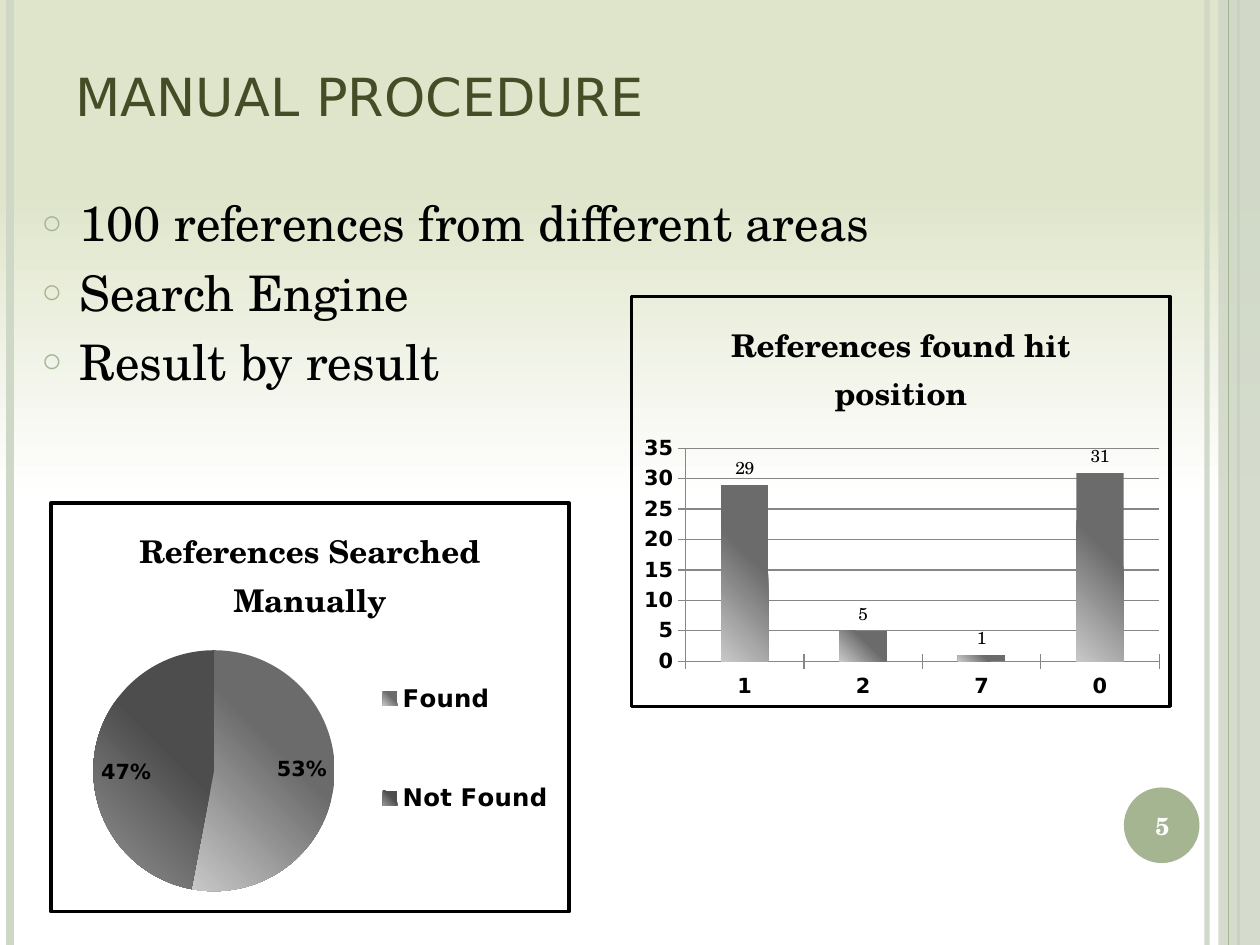
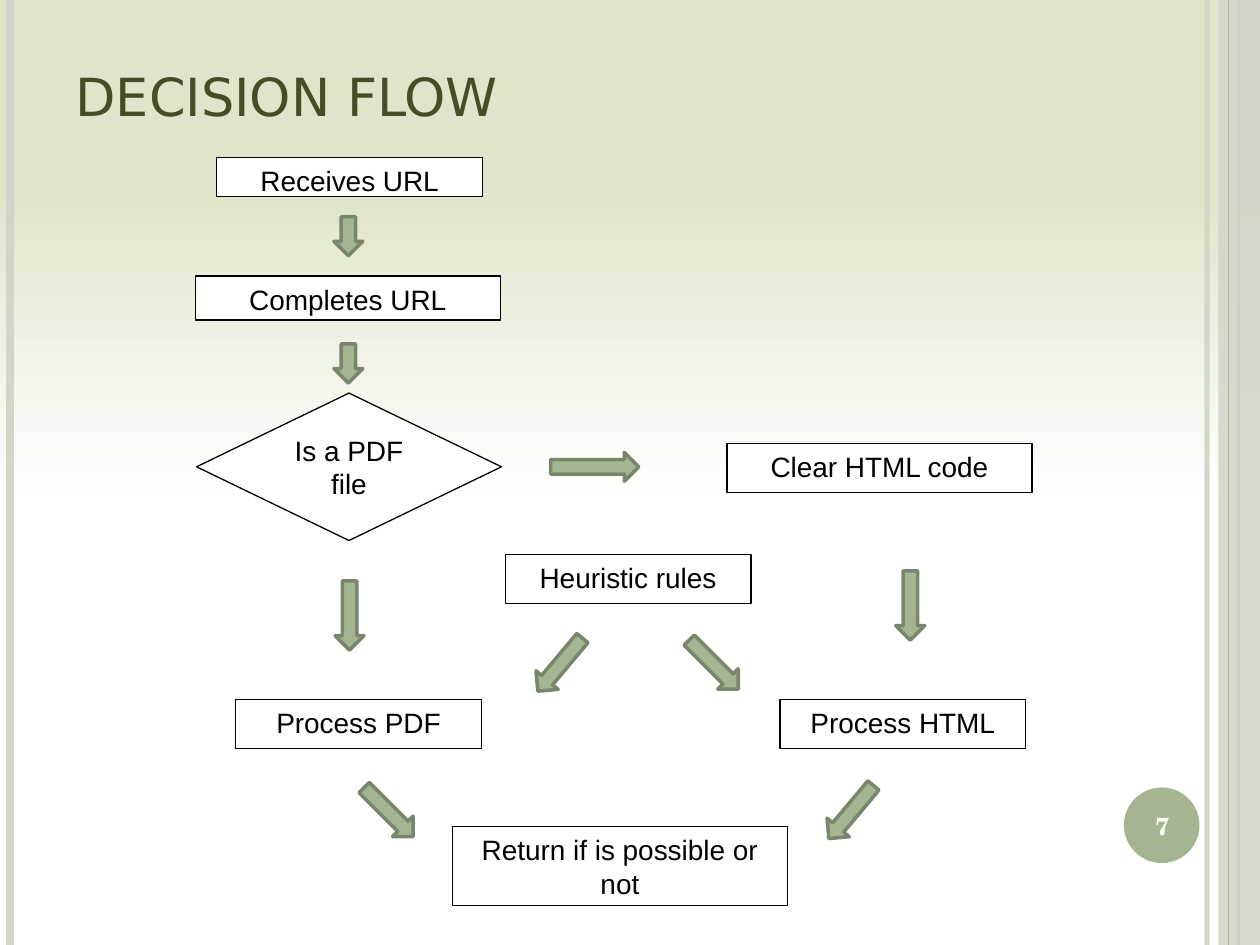
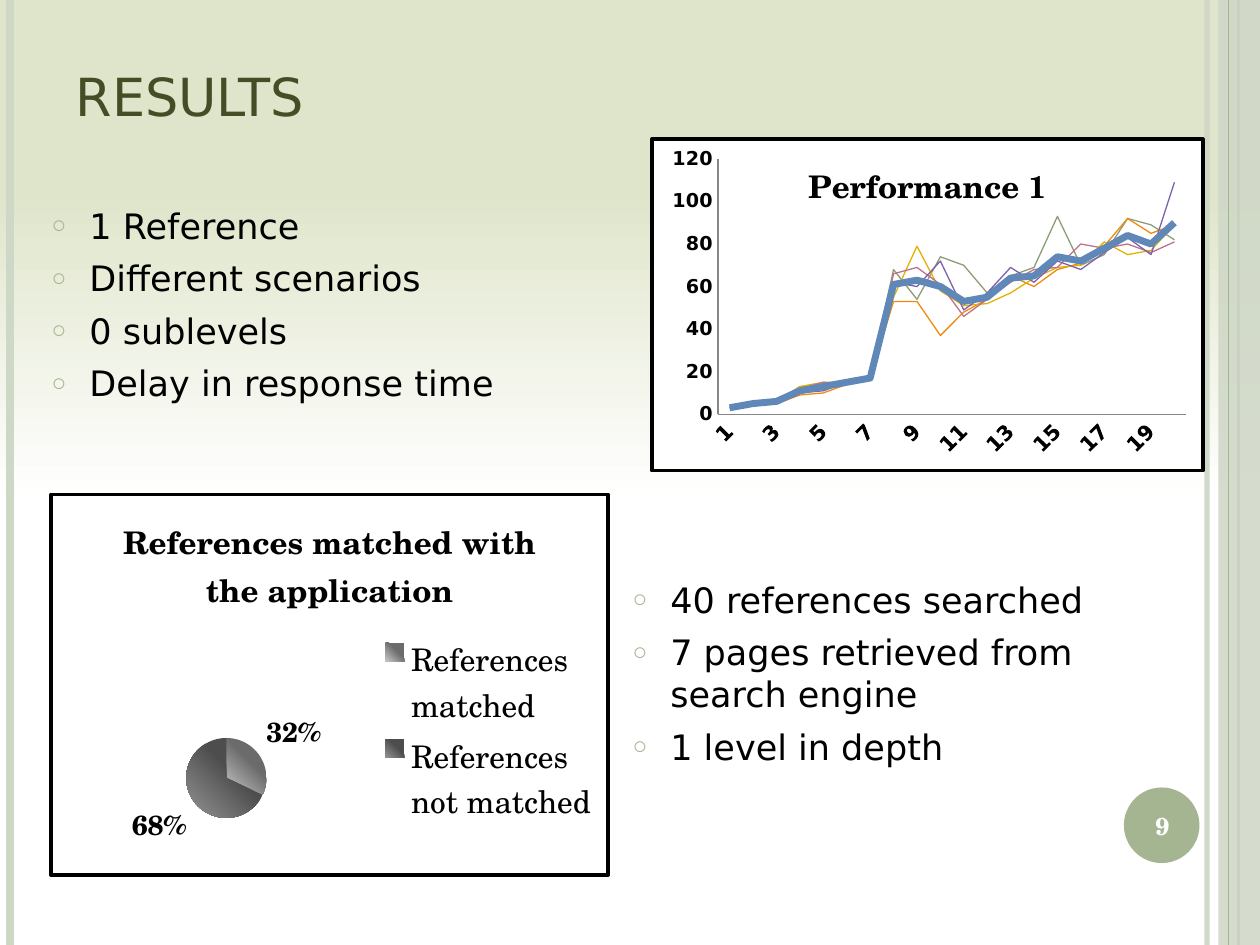
import lxml.etree
import pptx
import pptx.chart.data
import pptx.dml.color
import pptx.enum.chart
import pptx.enum.shapes
import pptx.enum.text
import pptx.oxml
import pptx.oxml.ns
import pptx.util

Inches = pptx.util.Inches
Pt = pptx.util.Pt
RGB = pptx.dml.color.RGBColor.from_string
qn = pptx.oxml.ns.qn
SubElement = lxml.etree.SubElement
MSO_SHAPE = pptx.enum.shapes.MSO_SHAPE
XL = pptx.enum.chart
PP_ALIGN = pptx.enum.text.PP_ALIGN
ANCHOR = pptx.enum.text.MSO_ANCHOR

COLORS = {
    "sky": "DFE5CA", "white": "FFFFFF", "black": "000000", "title": "444D26",
    "band": "CFD7C7", "accent": "A5B592", "arrow_edge": "7A866C", "grid": "868686",
    "found_light": "C8C8C8", "found_dark": "6B6B6B",
    "missed_light": "959595", "missed_dark": "4D4D4D",
}
RUN_COLORS = ["8B9D75", "F08A0C", "E3B200", "C0708C", "7D60AD", "5F87B8"]
SANS, SERIF, ARIAL = "DejaVu Sans", "TeX Gyre Schola", "Arial"


def set_gradient(fill, stops, corner=False):
    """Fill from top to bottom, or in circles from the lower left corner."""
    fill.gradient()
    grad = fill._xPr.find(qn("a:gradFill"))
    for child in list(grad):
        grad.remove(child)
    gs_list = SubElement(grad, qn("a:gsLst"))
    for percent, name in stops:
        gs = SubElement(gs_list, qn("a:gs"), pos=str(percent * 1000))
        SubElement(gs, qn("a:srgbClr"), val=COLORS[name])
    if corner:
        circle = SubElement(grad, qn("a:path"), path="circle")
        SubElement(circle, qn("a:fillToRect"), t="100000", r="100000")
    else:
        SubElement(grad, qn("a:lin"), ang="5400000", scaled="0")


def add_chart(s, kind, at, title, cats, series, plot_at, legend_at=None,
              legend_size=14, filled=False):
    """Add a framed chart; plot_at and legend_at are fractions of its size."""
    data = pptx.chart.data.CategoryChartData()
    data.categories = cats
    for number, values in enumerate(series, 1):
        data.add_series(f"Series {number}", values)
    chart = s.shapes.add_chart(kind, *map(Inches, at), data).chart
    chart.font.size = Pt(10)
    chart.font.name = SERIF
    chart.font.color.rgb = RGB(COLORS["black"])
    chart.has_title = True
    r = chart.chart_title.text_frame.paragraphs[0].add_run()
    r.text = title
    r.font.size, r.font.bold, r.font.name = Pt(18), True, SERIF
    r.font.color.rgb = RGB(COLORS["black"])

    space = chart._chartSpace
    frame = lxml.etree.Element(qn("c:spPr"))
    if filled:
        solid = SubElement(frame, qn("a:solidFill"))
        SubElement(solid, qn("a:srgbClr"), val=COLORS["white"])
    else:
        SubElement(frame, qn("a:noFill"))
    edge = SubElement(frame, qn("a:ln"), w=str(Pt(2)))
    solid = SubElement(edge, qn("a:solidFill"))
    SubElement(solid, qn("a:srgbClr"), val=COLORS["black"])
    space.find(qn("c:chart")).addnext(frame)

    chart.has_legend = legend_at is not None
    areas = [(space.find(".//" + qn("c:plotArea")), 0, plot_at)]
    if legend_at:
        chart.legend.position = XL.XL_LEGEND_POSITION.RIGHT
        chart.legend.include_in_layout = False
        chart.legend.font.size = Pt(legend_size)
        areas.append((space.find(".//" + qn("c:legend")), 1, legend_at))
    for area, index, fractions in areas:
        for old in area.findall(qn("c:layout")):
            area.remove(old)
        layout = lxml.etree.Element(qn("c:layout"))
        manual = SubElement(layout, qn("c:manualLayout"))
        if index == 0:
            SubElement(manual, qn("c:layoutTarget"), val="inner")
        for tag in ("xMode", "yMode"):
            SubElement(manual, qn("c:" + tag), val="edge")
        for tag, value in zip("xywh", fractions):
            SubElement(manual, qn("c:" + tag), val=str(value))
        area.insert(index, layout)
    return chart


prs = pptx.Presentation()
prs.slide_width, prs.slide_height = Inches(10), Inches(7.5)
master = prs.slide_master
set_gradient(master.background.fill, [(20, "sky"), (53, "white"), (90, "white")])

# Slides with titles, bulleted lists and page numbers
# Each list: place, top inset, size, font, lines
PAGES = [
    (1, "MANUAL PROCEDURE", "5", [
        ((0.23, 1.48, 8.95, 1.77), 0.05, 28, SERIF,
         ["100 references from different areas", "Search Engine", "Result by result"])]),
    (5, "DECISION FLOW", "7", []),
    (3, "RESULTS", "9", [
        ((0.31, 1.17, 4.69, 2.58), 0.45, 20, SANS,
         ["1 Reference", "Different scenarios", "0 sublevels", "Delay in response time"]),
        ((4.92, 4.14, 4.69, 2.5), 0.45, 20, SANS,
         ["40 references searched", "7 pages retrieved from search engine",
          "1 level in depth"])]),
]
for layout_index, title, number, lists in PAGES:
    s = prs.slides.add_slide(prs.slide_layouts[layout_index])
    sp = s.shapes.title
    sp.left, sp.top, sp.width, sp.height = map(Inches, (0.5, 0.3, 8.17, 1.25))
    tf = sp.text_frame
    tf.auto_size = pptx.enum.text.MSO_AUTO_SIZE.NONE
    tf.vertical_anchor = ANCHOR.BOTTOM
    tf.margin_bottom = Inches(0.54)
    p = tf.paragraphs[0]
    p.alignment = PP_ALIGN.LEFT
    r = p.add_run()
    r.text = title
    r.font.size, r.font.name = Pt(30), SANS
    r.font.color.rgb = RGB(COLORS["title"])

    for sp, (at, inset, size, font, lines) in zip(list(s.placeholders)[1:], lists):
        sp.left, sp.top, sp.width, sp.height = map(Inches, at)
        tf = sp.text_frame
        tf.auto_size = pptx.enum.text.MSO_AUTO_SIZE.NONE
        tf.margin_top = Inches(inset)
        for i, line in enumerate(lines):
            p = tf.add_paragraph() if i else tf.paragraphs[0]
            p.space_before = Pt(6)
            pPr = p._p.get_or_add_pPr()
            pPr.set("marL", str(Inches(0.3)))
            pPr.set("indent", str(Inches(-0.3)))
            color = SubElement(pPr, qn("a:buClr"))
            SubElement(color, qn("a:srgbClr"), val=COLORS["accent"])
            SubElement(pPr, qn("a:buSzPct"), val="70000")
            SubElement(pPr, qn("a:buChar"), char="○")
            r = p.add_run()
            r.text = line
            r.font.size, r.font.name = Pt(size), font
            r.font.color.rgb = RGB(COLORS["black"])

    tf = s.shapes.add_textbox(*map(Inches, (8.89, 6.27, 0.67, 0.57))).text_frame
    tf.word_wrap = True
    tf.vertical_anchor = ANCHOR.MIDDLE
    p = tf.paragraphs[0]
    p.alignment = PP_ALIGN.CENTER
    r = p.add_run()
    r.text = number
    r.font.size, r.font.bold, r.font.name = Pt(14), True, SERIF
    r.font.color.rgb = RGB(COLORS["white"])

manual, flow, results = prs.slides

# Side bands and number disc, drawn once and moved to the master
BANDS = [
    ("line", 9.58, "band", 3, 93), ("line", 0.08, "band", 4.5, 100),
    ("line", 9.83, "accent", 1.5, 100),
    (MSO_SHAPE.RECTANGLE, (9.67, 0, 0.33, 7.5), "band", 0, 87),
    ("line", 9.75, "accent", 0.75, 100),
    (MSO_SHAPE.OVAL, (8.92, 6.25, 0.6, 0.6), "accent", 0, 100),
]
for kind, at, color, weight, opacity in BANDS:
    if kind == "line":
        sp = manual.shapes.add_connector(
            pptx.enum.shapes.MSO_CONNECTOR.STRAIGHT,
            Inches(at), 0, Inches(at), prs.slide_height)
        sp.line.width = Pt(weight)
        sp.line.color.rgb = RGB(COLORS[color])
        SubElement(sp._element.spPr, qn("a:effectLst"))
    else:
        sp = manual.shapes.add_shape(kind, *map(Inches, at))
        sp.shadow.inherit = False
        sp.fill.solid()
        sp.fill.fore_color.rgb = RGB(COLORS[color])
        sp.line.fill.background()
    if opacity < 100:
        rgb = sp._element.spPr.find(".//" + qn("a:srgbClr"))
        SubElement(rgb, qn("a:alpha"), val=str(opacity * 1000))
    master.shapes._spTree.append(sp._element)

# Column chart of hit positions
hits = add_chart(
    manual, XL.XL_CHART_TYPE.COLUMN_CLUSTERED, (5, 2.34, 4.3, 3.28),
    "References found hit position", ["1", "2", "7", "0"], [[29, 5, 1, 31]],
    (0.1, 0.37, 0.88, 0.52))
plot = hits.plots[0]
plot.gap_width = 150
plot.vary_by_categories = False
plot.has_data_labels = True
plot.data_labels.show_value = True
plot.data_labels.position = XL.XL_LABEL_POSITION.OUTSIDE_END
FOUND = [(0, "found_light"), (60, "found_dark"), (100, "found_dark")]
MISSED = [(0, "missed_light"), (60, "missed_dark"), (100, "missed_dark")]
set_gradient(plot.series[0].format.fill, FOUND, corner=True)

# Line chart of the test runs; the last series is the thick one
RUNS = [
    [3, 5, 6, 13, 13, 15, 18, 68, 54, 74, 70, 57, 65, 69, 93, 70, 75, 92, 89, 82],
    [3, 5, 5, 9, 10, 14, 17, 53, 53, 37, 48, 54, 65, 60, 68, 71, 79, 92, 85, 89],
    [3, 6, 5, 13, 15, 15, 17, 55, 79, 58, 51, 52, 57, 64, 69, 70, 81, 75, 77, 89],
    [3, 4, 6, 12, 15, 14, 17, 66, 69, 61, 46, 54, 62, 68, 69, 80, 78, 80, 76, 81],
    [3, 4, 5, 10, 11, 15, 17, 62, 60, 72, 49, 57, 69, 62, 72, 68, 76, 83, 75, 109],
    [3, 5, 6, 11, 13, 15, 17, 61, 63, 60, 53, 55, 64, 65, 74, 72, 78, 84, 80, 90],
]
performance = add_chart(
    results, XL.XL_CHART_TYPE.LINE, (5.16, 1.09, 4.4, 2.66), "Performance 1",
    [str(n) for n in range(1, 21)], RUNS, (0.12, 0.06, 0.85, 0.77), filled=True)
title = performance._chartSpace.find(".//" + qn("c:title"))
for old in title.findall(qn("c:overlay")):
    title.remove(old)
overlay = lxml.etree.Element(qn("c:overlay"), val="1")
title.find(qn("c:tx")).addnext(overlay)
for old in title.findall(qn("c:layout")):
    overlay.addprevious(old)
for series, color in zip(performance.plots[0].series, RUN_COLORS):
    series.smooth = False
    series.marker.style = XL.XL_MARKER_STYLE.NONE
    series.format.line.width = Pt(4 if color == RUN_COLORS[-1] else 0.75)
    series.format.line.color.rgb = RGB(color)

for chart, tick, top, step, value_size in [
        (hits, XL.XL_TICK_MARK.CROSS, 35, 5, 12),
        (performance, XL.XL_TICK_MARK.NONE, 120, 20, 11)]:
    for axis, size in [(chart.category_axis, 12), (chart.value_axis, value_size)]:
        font = axis.tick_labels.font
        font.size, font.bold, font.name = Pt(size), True, SANS
        axis.major_tick_mark = tick
        axis.minor_tick_mark = XL.XL_TICK_MARK.NONE
        axis.format.line.color.rgb = RGB(COLORS["grid"])
    axis = chart.value_axis
    axis.minimum_scale, axis.maximum_scale, axis.major_unit = 0, top, step
    axis.has_major_gridlines = chart is hits
hits.value_axis.major_gridlines.format.line.color.rgb = RGB(COLORS["grid"])
labels = performance.value_axis.tick_labels
labels.number_format, labels.number_format_is_linked = "0", False
body = performance.category_axis._element.find(qn("c:txPr")).find(qn("a:bodyPr"))
body.set("rot", "-2700000")
body.set("vert", "horz")

# Pie charts
searched = add_chart(
    manual, XL.XL_CHART_TYPE.PIE, (0.39, 3.98, 4.14, 3.27),
    "References Searched Manually", ["Found", "Not Found"], [[53, 47]],
    (0.08, 0.36, 0.47, 0.59), (0.62, 0.27, 0.36, 0.66))
searched.legend.font.bold = True
searched.legend.font.name = SANS
matched = add_chart(
    results, XL.XL_CHART_TYPE.PIE, (0.39, 3.91, 4.45, 3.05),
    "References matched with the application",
    ["References matched", "References not matched"], [[32, 68]],
    (0.24, 0.64, 0.15, 0.21), (0.58, 0.36, 0.41, 0.52), 18, filled=True)
for chart, position, size, font in [
        (searched, XL.XL_LABEL_POSITION.INSIDE_END, 12, SANS),
        (matched, XL.XL_LABEL_POSITION.OUTSIDE_END, 16, SERIF)]:
    plot = chart.plots[0]
    plot.vary_by_categories = True
    plot.has_data_labels = True
    labels = plot.data_labels
    labels.show_percentage, labels.show_value = True, False
    labels.number_format, labels.number_format_is_linked = "0%", False
    labels.position = position
    labels.font.size, labels.font.bold, labels.font.name = Pt(size), True, font
    for i, stops in enumerate([FOUND, MISSED]):
        set_gradient(plot.series[0].points[i].format.fill, stops, corner=True)

# Decision flow: steps, then arrows
STEPS = [
    ("Receives URL", (1.72, 1.25, 2.11, 0.31)),
    ("Completes URL", (1.55, 2.19, 2.42, 0.35)),
    ("Is a PDF file", (1.56, 3.12, 2.42, 1.17)),
    ("Process PDF", (1.87, 5.55, 1.95, 0.39)),
    ("Clear HTML code", (5.77, 3.52, 2.42, 0.39)),
    ("Process HTML", (6.19, 5.55, 1.95, 0.39)),
    ("Heuristic rules", (4.01, 4.4, 1.95, 0.39)),
    ("Return if is possible or not", (3.59, 6.56, 2.66, 0.63)),
]
for text, at in STEPS:
    decision = text == "Is a PDF file"
    sp = flow.shapes.add_shape(
        MSO_SHAPE.DIAMOND if decision else MSO_SHAPE.RECTANGLE, *map(Inches, at))
    sp.shadow.inherit = False
    sp.fill.solid()
    sp.fill.fore_color.rgb = RGB(COLORS["white"])
    sp.line.color.rgb = RGB(COLORS["black"])
    sp.line.width = Pt(0.75)
    tf = sp.text_frame
    tf.word_wrap = True
    tf.vertical_anchor = ANCHOR.MIDDLE if decision else ANCHOR.TOP
    p = tf.paragraphs[0]
    p.alignment = PP_ALIGN.CENTER
    r = p.add_run()
    r.text = text
    r.font.size, r.font.name = Pt(16), ARIAL
    r.font.color.rgb = RGB(COLORS["black"])

# Left, top, length and turn of each downward arrow
DOWN_ARROWS = [
    (2.65, 1.72, 0.31, 0), (2.65, 2.73, 0.31, 0), (7.11, 4.53, 0.55, 0),
    (2.66, 4.61, 0.55, 0), (2.97, 6.17, 0.55, -45), (6.64, 6.17, 0.55, 40),
    (5.55, 5, 0.55, -45), (4.33, 5, 0.55, 40),
]
arrows = [(MSO_SHAPE.DOWN_ARROW, (x, y, 0.23, length), turn)
          for x, y, length, turn in DOWN_ARROWS]
arrows.append((MSO_SHAPE.RIGHT_ARROW, (4.37, 3.59, 0.7, 0.23), 0))
for kind, at, turn in arrows:
    sp = flow.shapes.add_shape(kind, *map(Inches, at))
    sp.rotation = turn
    sp.shadow.inherit = False
    sp.fill.solid()
    sp.fill.fore_color.rgb = RGB(COLORS["accent"])
    sp.line.color.rgb = RGB(COLORS["arrow_edge"])
    sp.line.width = Pt(2)

prs.save("out.pptx")
